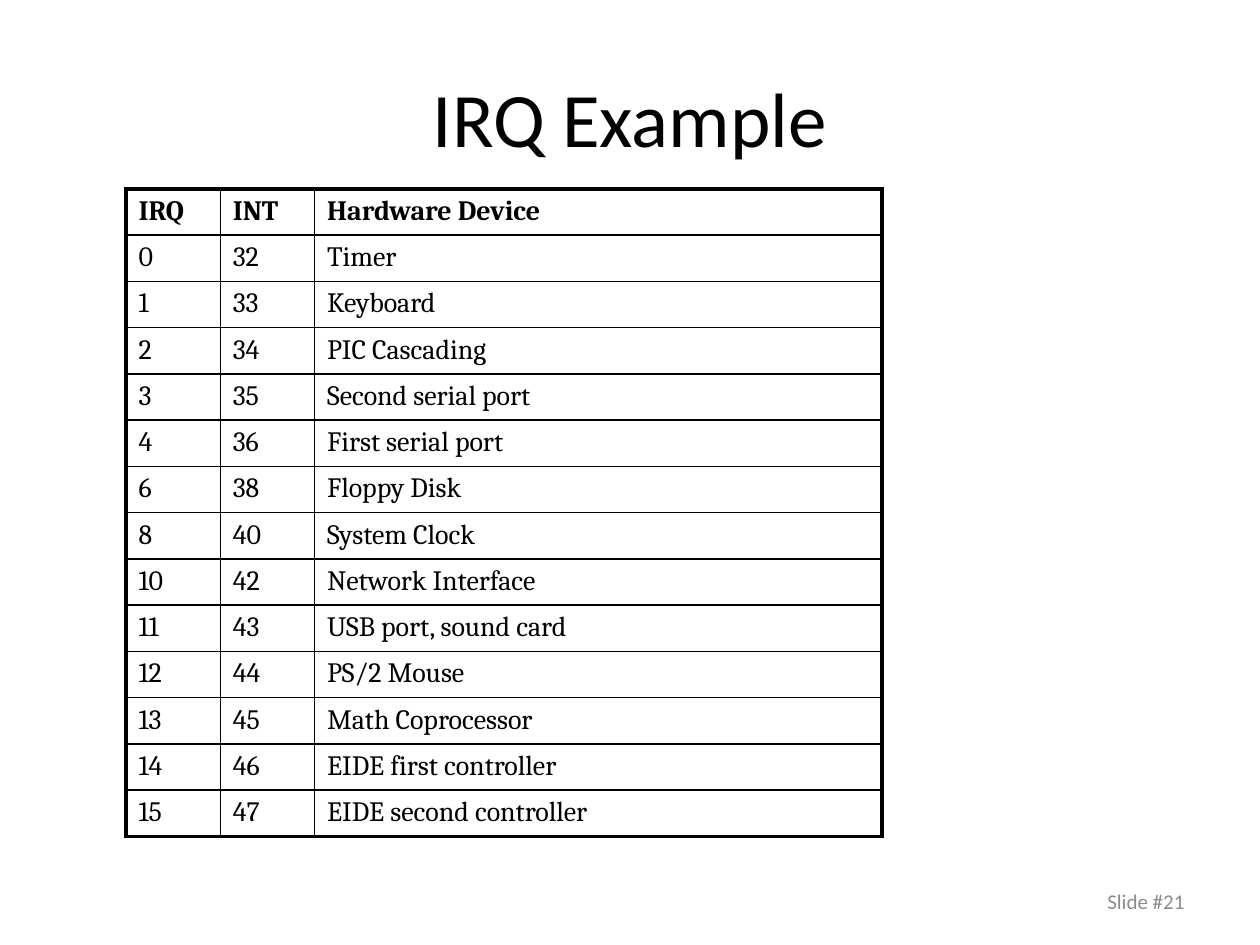
from lxml import etree
from pptx import Presentation
from pptx.dml.color import RGBColor
from pptx.enum.text import MSO_ANCHOR, PP_ALIGN
from pptx.oxml.ns import qn
from pptx.util import Cm, Pt

BLACK = RGBColor(0x00, 0x00, 0x00)
WHITE = RGBColor(0xFF, 0xFF, 0xFF)
GREY = RGBColor(0x8C, 0x8C, 0x8C)
LEFT, CENTER, RIGHT = PP_ALIGN.LEFT, PP_ALIGN.CENTER, PP_ALIGN.RIGHT
MIDDLE = MSO_ANCHOR.MIDDLE

THIN, THICK = Pt(1), Pt(2.25)
COLUMN_WIDTHS = (Cm(1.9), Cm(1.9), Cm(11.44))
ROW_HEIGHT = Cm(0.93)
TITLE_FORMAT = {"name": "Calibri", "size": Pt(44)}
CELL_FORMAT = {"name": "Cambria", "size": Pt(16)}
NUMBER_FORMAT = {"name": "Calibri", "size": Pt(12)}

HEADINGS = ("IRQ", "INT", "Hardware Device")
FIRST_INTERRUPT = 32
DEVICES = {
    0: "Timer",
    1: "Keyboard",
    2: "PIC Cascading",
    3: "Second serial port",
    4: "First serial port",
    6: "Floppy Disk",
    8: "System Clock",
    10: "Network Interface",
    11: "USB port, sound card",
    12: "PS/2 Mouse",
    13: "Math Coprocessor",
    14: "EIDE first controller",
    15: "EIDE second controller",
}


def write_text(paragraph, text, format_values, color, alignment):
    """Put one formatted run into a paragraph."""
    paragraph.alignment = alignment
    run = paragraph.add_run()
    run.text = text
    for name, value in format_values.items():
        setattr(run.font, name, value)
    run.font.color.rgb = color


def add_text(slide, box, text, format_values, color, alignment):
    """Add a wrapped, vertically centred text box."""
    text_frame = slide.shapes.add_textbox(*box).text_frame
    text_frame.word_wrap = True
    text_frame.vertical_anchor = MIDDLE
    write_text(text_frame.paragraphs[0], text, format_values, color, alignment)


def set_borders(cell, widths):
    """Draw solid cell borders with the given width per side."""
    properties = cell._tc.get_or_add_tcPr()
    for side, width in widths.items():
        line = etree.SubElement(properties, qn(f"a:ln{side}"), w=str(width))
        fill = etree.SubElement(line, qn("a:solidFill"))
        etree.SubElement(fill, qn("a:srgbClr"), val=str(BLACK))


def add_irq_table(slide, left, top):
    """Add the interrupt table with a thick outline and thin inner lines."""
    rows = [HEADINGS] + [
        (str(irq), str(FIRST_INTERRUPT + irq), device)
        for irq, device in DEVICES.items()
    ]
    last_row, last_column = len(rows) - 1, len(HEADINGS) - 1
    table = slide.shapes.add_table(
        len(rows), len(HEADINGS), left, top,
        sum(COLUMN_WIDTHS), ROW_HEIGHT * len(rows),
    ).table
    for column, width in zip(table.columns, COLUMN_WIDTHS):
        column.width = width
    for row_index, row in enumerate(rows):
        table.rows[row_index].height = ROW_HEIGHT
        for column_index, text in enumerate(row):
            cell = table.cell(row_index, column_index)
            set_borders(cell, {
                "L": THICK if column_index == 0 else THIN,
                "R": THICK if column_index == last_column else THIN,
                "T": THICK if row_index == 0 else THIN,
                "B": THICK if row_index == last_row else THIN,
            })
            cell.fill.solid()
            cell.fill.fore_color.rgb = WHITE
            format_values = {**CELL_FORMAT, "bold": row_index == 0}
            paragraph = cell.text_frame.paragraphs[0]
            write_text(paragraph, text, format_values, BLACK, LEFT)


def main():
    """Build the IRQ example slide and save it."""
    presentation = Presentation()
    presentation.slide_width, presentation.slide_height = Cm(25.4), Cm(19.05)
    slide = presentation.slides.add_slide(presentation.slide_layouts[6])
    title_box = (Cm(1.27), Cm(0.76), Cm(22.86), Cm(3.18))
    number_box = (Cm(18.2), Cm(17.66), Cm(5.93), Cm(1.01))
    add_text(slide, title_box, "IRQ Example", TITLE_FORMAT, BLACK, CENTER)
    add_irq_table(slide, Cm(2.54), Cm(3.81))
    add_text(slide, number_box, "Slide #21", NUMBER_FORMAT, GREY, RIGHT)
    presentation.save("out.pptx")


if __name__ == "__main__":
    main()
